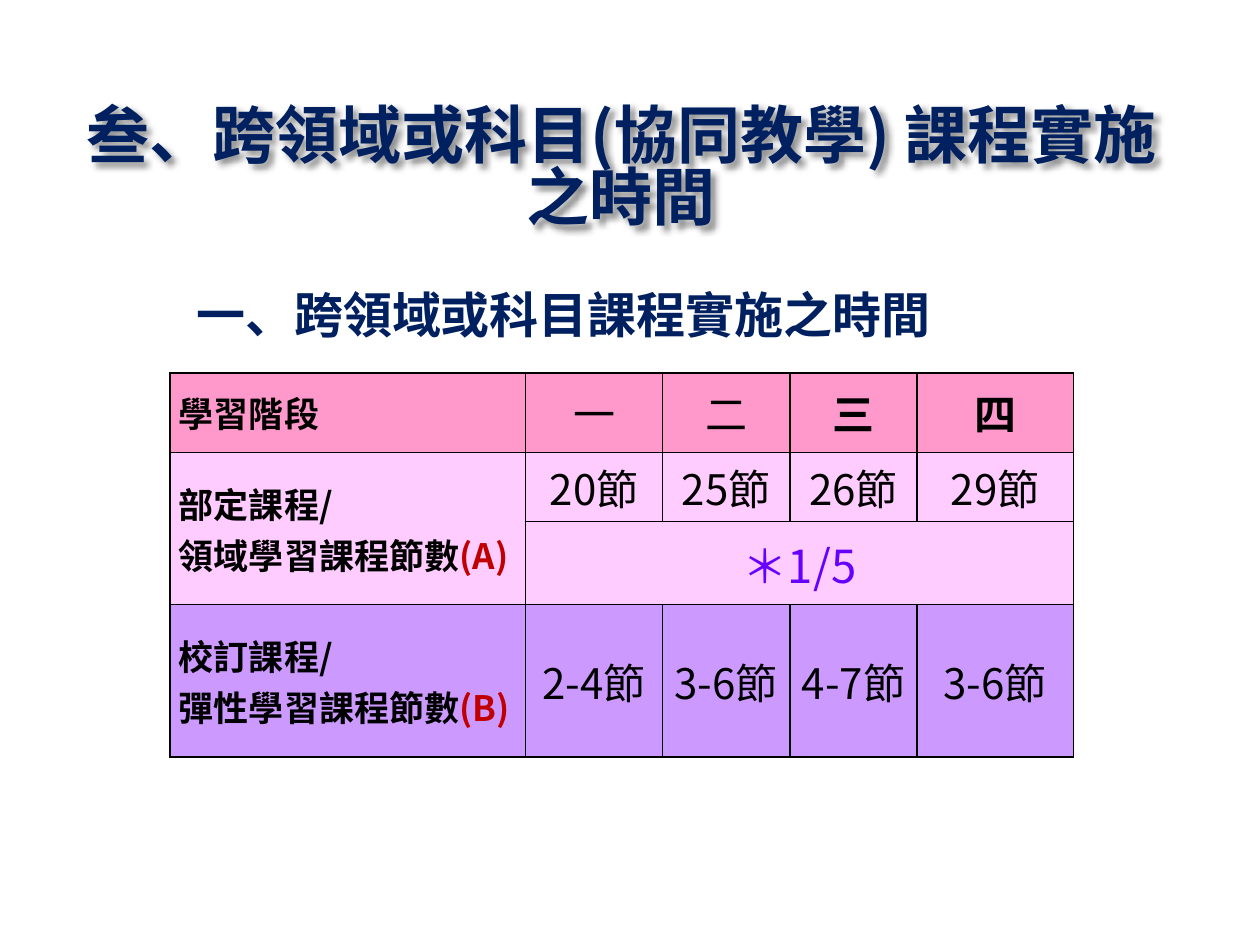
from dataclasses import dataclass

from lxml.etree import SubElement
from pptx import Presentation
from pptx.dml.color import RGBColor
from pptx.enum.text import MSO_ANCHOR, MSO_AUTO_SIZE, PP_ALIGN
from pptx.oxml import parse_xml
from pptx.oxml.ns import nsdecls, qn
from pptx.util import Inches, Pt


@dataclass(frozen=True)
class Theme:
    font: str = "Noto Sans CJK SC"
    navy: str = "002060"
    black: str = "000000"
    red: str = "C00000"
    violet: str = "6600FF"
    header_fill: str = "FF99CC"
    domain_fill: str = "FFCCFF"
    school_fill: str = "CC99FF"
    title: int = 36
    subtitle: int = 28
    share: int = 26
    value: int = 24
    label: int = 20


THEME = Theme()


@dataclass(frozen=True)
class Cell:
    row: int
    col: int
    text: str
    fill: str
    size: int = THEME.value
    color: str = THEME.black
    bold: bool = False
    mark: str = ""
    rows: int = 1
    cols: int = 1


COLS = (2.82, 1.09, 1.01, 1.01, 1.24)
ROWS = (0.63, 0.55, 0.57, 0.85)


def label(row: int, text: str, fill: str, mark: str = "", rows: int = 1) -> Cell:
    return Cell(row, 0, text, fill, THEME.label, bold=True, mark=mark, rows=rows)


def values(row: int, texts: tuple[str, ...], fill: str, bold_from: int = 9) -> list[Cell]:
    """Cells beside the row label; columns from bold_from on are bold."""
    return [Cell(row, c, t, fill, bold=c >= bold_from) for c, t in enumerate(texts, 1)]


CELLS = [
    label(0, "學習階段", THEME.header_fill),
    *values(0, ("一", "二", "三", "四"), THEME.header_fill, bold_from=3),
    label(1, "部定課程/\n領域學習課程節數", THEME.domain_fill, "(A)", rows=2),
    *values(1, ("20節", "25節", "26節", "29節"), THEME.domain_fill),
    Cell(2, 1, "＊1/5", THEME.domain_fill, THEME.share, THEME.violet, cols=4),
    label(3, "校訂課程/\n彈性學習課程節數", THEME.school_fill, "(B)"),
    *values(3, ("2-4節", "3-6節", "4-7節", "3-6節"), THEME.school_fill),
]


def style_run(r, size: int, color: str, bold: bool) -> None:
    r.font.size = Pt(size)
    r.font.bold = bold
    r.font.color.rgb = RGBColor.from_string(color)
    r.font.name = THEME.font
    SubElement(r.font._element, qn("a:ea"), typeface=THEME.font)


def style_text(tf, size: int, color: str, bold: bool) -> None:
    for p in tf.paragraphs:
        for r in p.runs:
            style_run(r, size, color, bold)


def border_cell(cell) -> None:
    tc_pr = cell._tc.get_or_add_tcPr()
    for i, side in enumerate(("lnL", "lnR", "lnT", "lnB")):
        tc_pr.insert(i, parse_xml(
            f'<a:{side} {nsdecls("a")} w="12700"><a:solidFill>'
            f'<a:srgbClr val="{THEME.black}"/></a:solidFill></a:{side}>'))


def fill_cell(table, item: Cell) -> None:
    cell = table.cell(item.row, item.col)
    span = [table.cell(item.row + i, item.col + j)
            for i in range(item.rows) for j in range(item.cols)]
    if len(span) > 1:
        cell.merge(span[-1])
    for part in span:
        part.fill.solid()
        part.fill.fore_color.rgb = RGBColor.from_string(item.fill)
        border_cell(part)
    cell.vertical_anchor = MSO_ANCHOR.MIDDLE
    cell.margin_left = cell.margin_right = Inches(0.07)
    cell.margin_top = cell.margin_bottom = 0
    tf = cell.text_frame
    tf.text = item.text
    style_text(tf, item.size, item.color, item.bold)
    for p in tf.paragraphs:
        p.alignment = PP_ALIGN.CENTER if item.col else PP_ALIGN.LEFT
    if item.mark:
        r = tf.paragraphs[-1].add_run()
        r.text = item.mark
        style_run(r, item.size, THEME.red, item.bold)


def add_title(s, text: str) -> None:
    sp = s.shapes.title
    sp.left, sp.top, sp.width, sp.height = map(Inches, (0.43, 0.73, 9, 1.25))
    tf = sp.text_frame
    tf.text = text
    tf.auto_size = MSO_AUTO_SIZE.NONE
    tf.vertical_anchor = MSO_ANCHOR.MIDDLE
    p = tf.paragraphs[0]
    p.alignment = PP_ALIGN.CENTER
    p.line_spacing = 0.83
    style_text(tf, THEME.title, THEME.navy, True)
    sp._element.spPr.append(parse_xml(
        f'<a:effectLst {nsdecls("a")}><a:outerShdw blurRad="38100" dist="38100" '
        f'dir="2700000" algn="tl"><a:srgbClr val="{THEME.black}">'
        '<a:alpha val="43000"/></a:srgbClr></a:outerShdw></a:effectLst>'))


def add_subtitle(s, text: str) -> None:
    tf = s.shapes.add_textbox(*map(Inches, (1.46, 2.21, 6.09, 0.57))).text_frame
    tf.text = text
    tf.word_wrap = False
    tf.auto_size = MSO_AUTO_SIZE.SHAPE_TO_FIT_TEXT
    style_text(tf, THEME.subtitle, THEME.navy, True)


def add_hours_table(s) -> None:
    table = s.shapes.add_table(
        len(ROWS), len(COLS), Inches(1.35), Inches(2.96),
        Inches(sum(COLS)), Inches(sum(ROWS))).table
    for column, width in zip(table.columns, COLS):
        column.width = Inches(width)
    for row, height in zip(table.rows, ROWS):
        row.height = Inches(height)
    for item in CELLS:
        fill_cell(table, item)


def main() -> None:
    prs = Presentation()
    prs.slide_width, prs.slide_height = Inches(10), Inches(7.5)
    s = prs.slides.add_slide(prs.slide_layouts[5])
    add_title(s, "叁、跨領域或科目(協同教學) 課程實施之時間")
    add_hours_table(s)
    add_subtitle(s, "一、跨領域或科目課程實施之時間")
    prs.save("out.pptx")


if __name__ == "__main__":
    main()
